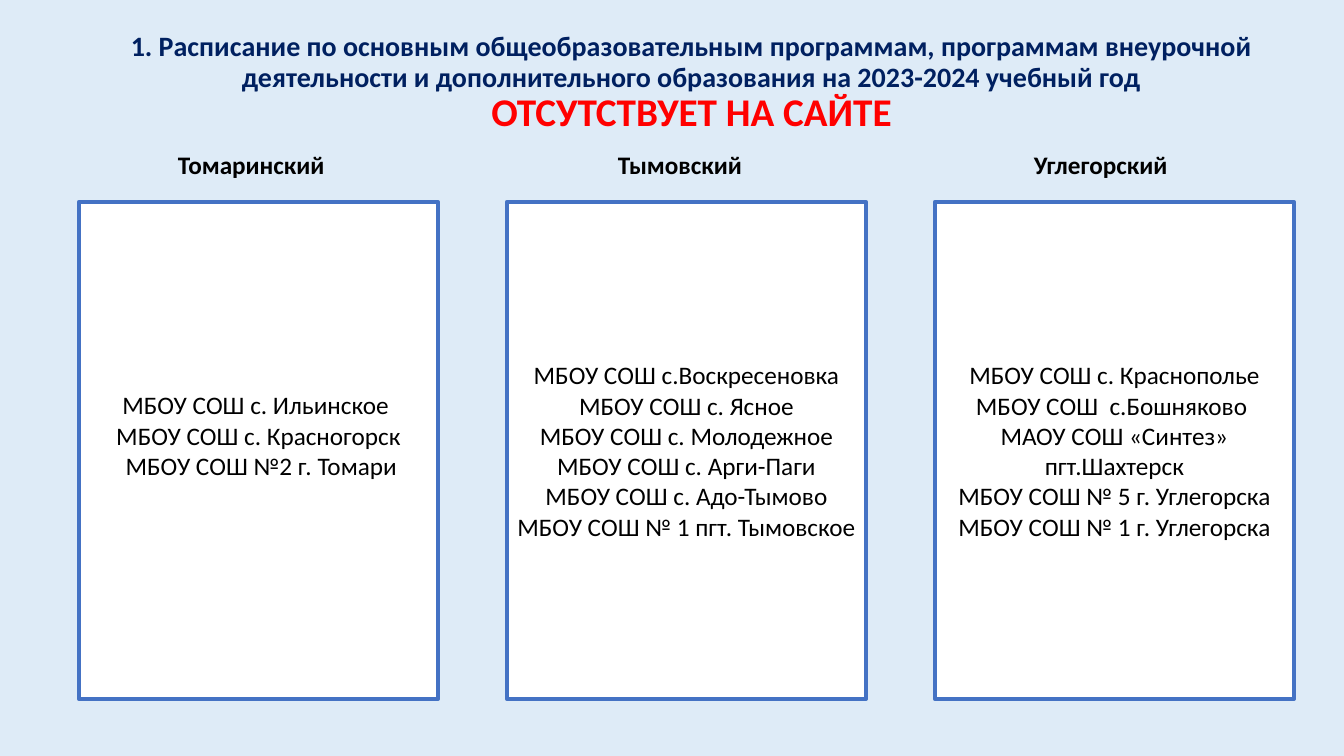
from pptx import Presentation
from pptx.dml.color import RGBColor
from pptx.enum.shapes import MSO_SHAPE
from pptx.enum.text import MSO_ANCHOR, MSO_AUTO_SIZE, PP_ALIGN
from pptx.util import Pt

PX = 914400 / 100.8
BACKGROUND = RGBColor(0xDE, 0xEB, 0xF7)
WHITE = RGBColor(0xFF, 0xFF, 0xFF)
BLACK = RGBColor(0x00, 0x00, 0x00)
BLUE = RGBColor(0x44, 0x72, 0xC4)
NAVY = RGBColor(0x00, 0x20, 0x60)
RED = RGBColor(0xFF, 0x00, 0x00)

BOX_LEFT, BOX_TOP, BOX_WIDTH, BOX_HEIGHT, BOX_STEP = 79, 202, 359, 497, 428
HEADING_TOP, HEADING_HEIGHT = 144, 40
LINE_HEIGHT = 31

# District, heading left and width, empty lines kept below the list, schools
DISTRICTS = [
    ("Томаринский", 168, 168, 1, [
        "МБОУ СОШ с. Ильинское ",
        "МБОУ СОШ с. Красногорск",
        " МБОУ СОШ №2 г. Томари",
    ]),
    ("Тымовский", 608, 145, 0, [
        "МБОУ СОШ с.Воскресеновка",
        "МБОУ СОШ с. Ясное",
        "МБОУ СОШ с. Молодежное",
        "МБОУ СОШ с. Арги-Паги",
        "МБОУ СОШ с. Адо-Тымово",
        "МБОУ СОШ № 1 пгт. Тымовское",
    ]),
    ("Углегорский", 1024, 155, 0, [
        "МБОУ СОШ с. Краснополье",
        "МБОУ СОШ  с.Бошняково ",
        "МАОУ СОШ «Синтез» пгт.Шахтерск",
        "МБОУ СОШ № 5 г. Углегорска",
        "МБОУ СОШ № 1 г. Углегорска",
    ]),
]


def px(*lengths):
    """Turn pixel lengths into EMU."""
    return [round(n * PX) for n in lengths]


def add_run(p, text, size, color, bold=False):
    r = p.add_run()
    r.text = text
    r.font.color.rgb = color
    values = {"name": "Calibri", "size": Pt(size), "bold": bold}
    for name, value in values.items():
        setattr(r.font, name, value)


prs = Presentation()
prs.slide_width, prs.slide_height = px(1344, 756)
s = prs.slides.add_slide(prs.slide_layouts[6])
s.background.fill.solid()
s.background.fill.fore_color.rgb = BACKGROUND

for i, (district, left, width, spare_lines, schools) in enumerate(DISTRICTS):
    box = s.shapes.add_shape(
        MSO_SHAPE.RECTANGLE,
        *px(BOX_LEFT + i * BOX_STEP, BOX_TOP, BOX_WIDTH, BOX_HEIGHT))
    box.shadow.inherit = False
    box.fill.solid()
    box.fill.fore_color.rgb = WHITE
    box.line.color.rgb = BLUE
    box.line.width = Pt(3)
    tf = box.text_frame
    tf.word_wrap = True
    tf.vertical_anchor = MSO_ANCHOR.MIDDLE
    tf.margin_bottom = px(5 + spare_lines * LINE_HEIGHT)[0]
    for j, school in enumerate(schools):
        p = tf.add_paragraph() if j else tf.paragraphs[0]
        p.alignment = PP_ALIGN.CENTER
        add_run(p, school, 18, BLACK)

    heading = s.shapes.add_textbox(
        *px(left, HEADING_TOP, width, HEADING_HEIGHT))
    tf = heading.text_frame
    tf.word_wrap = False
    tf.auto_size = MSO_AUTO_SIZE.SHAPE_TO_FIT_TEXT
    add_run(tf.paragraphs[0], district, 18, BLACK, bold=True)

title = s.shapes.add_textbox(*px(BOX_LEFT, 16, 1225, 136))
tf = title.text_frame
tf.word_wrap = True
tf.vertical_anchor = MSO_ANCHOR.MIDDLE
p = tf.paragraphs[0]
p.alignment = PP_ALIGN.CENTER
p.line_spacing = 0.9
add_run(p, "1. Расписание по основным общеобразовательным программам, "
        "программам внеурочной деятельности и дополнительного образования "
        "на 2023-2024 учебный год", 20, NAVY, bold=True)
p.add_line_break()
add_run(p, "ОТСУТСТВУЕТ НА САЙТЕ", 28, RED, bold=True)

prs.save("out.pptx")
